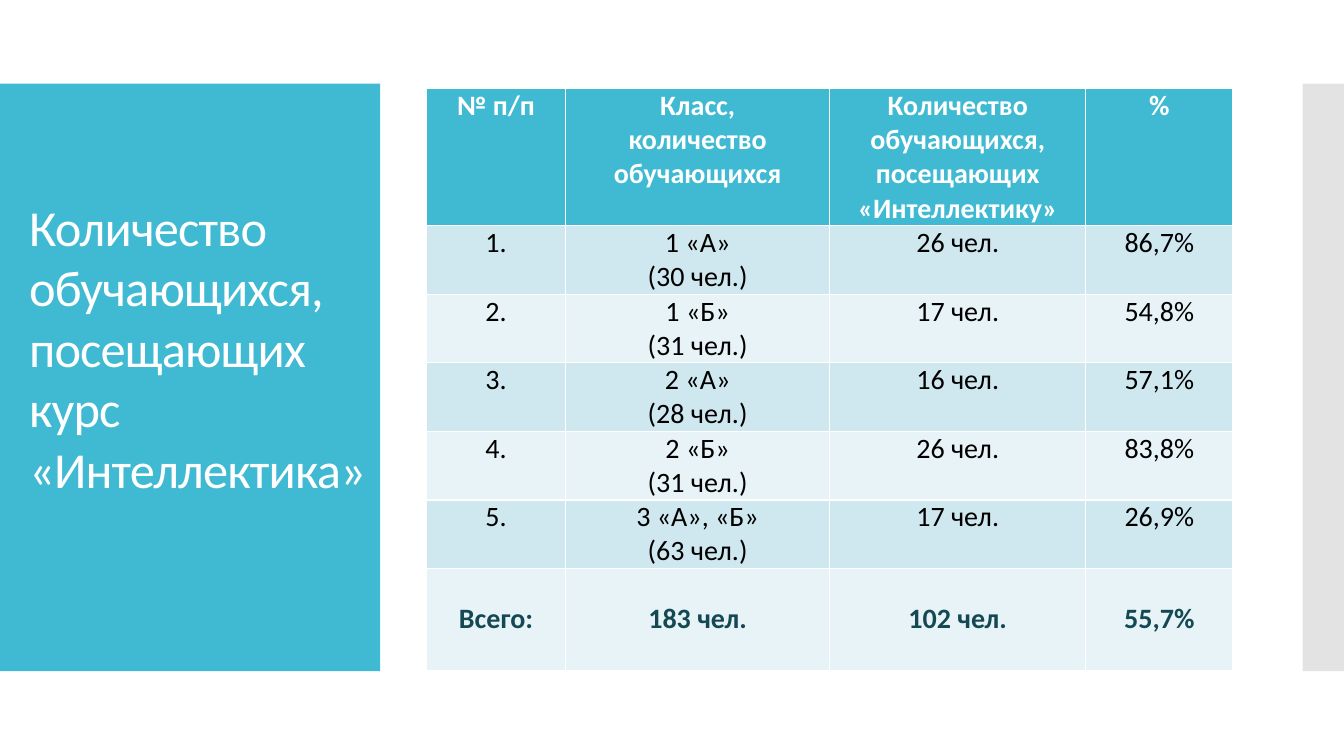
"""Build a slide with a side title and a table of course attendance by class."""
from lxml import etree
from pptx import Presentation
from pptx.dml.color import RGBColor
from pptx.enum import shapes, text
from pptx.oxml import ns
from pptx.util import Inches, Pt

FONT = "Calibri"
COLORS = {
    "teal": "40BAD2", "gray": "C8C8C8", "white": "FFFFFF", "black": "000000",
    "dark": "CFE7EE", "light": "E8F3F7", "total": "144954",
}
WIDTHS = [1.38, 2.62, 2.54, 1.46]
HEIGHTS = [1.36] + [0.68] * 5 + [1.01]
ROWS = [
    ["№ п/п", "Класс,\nколичество обучающихся",
     "Количество\nобучающихся, посещающих «Интеллектику»", "%"],
    ["1.", "1 «А»\n(30 чел.)", "26 чел.", "86,7%"],
    ["2.", "1 «Б»\n(31 чел.)", "17 чел.", "54,8%"],
    ["3.", "2 «А»\n(28 чел.)", "16 чел.", "57,1%"],
    ["4.", "2 «Б»\n(31 чел.)", "26 чел.", "83,8%"],
    ["5.", "3 «А», «Б»\n(63 чел.)", "17 чел.", "26,9%"],
    ["Всего:", "183 чел.", "102 чел.", "55,7%"],
]


def color(name):
    return RGBColor.from_string(COLORS[name])


def style(font, size, name, bold=False):
    font.name, font.size, font.bold = FONT, Pt(size), bold
    font.color.rgb = color(name)


def add_panel(slide, left, width, name, alpha=None):
    panel = slide.shapes.add_shape(
        shapes.MSO_SHAPE.RECTANGLE,
        Inches(left), Inches(0.83), Inches(width), Inches(5.83))
    panel.shadow.inherit = False
    panel.fill.solid()
    panel.fill.fore_color.rgb = color(name)
    panel.line.fill.background()
    if alpha:
        tint = panel._element.spPr.find(".//" + ns.qn("a:srgbClr"))
        etree.SubElement(tint, ns.qn("a:alpha")).set("val", str(alpha * 1000))


def add_title(slide, words):
    box = slide.shapes.add_textbox(
        Inches(0.19), Inches(1.23), Inches(3.59), Inches(5.03))
    frame = box.text_frame
    frame.word_wrap = True
    frame.vertical_anchor = text.MSO_ANCHOR.MIDDLE
    frame.margin_bottom = Inches(0.65)
    line = frame.paragraphs[0]
    line.text = words
    style(line.font, 36, "white")
    for run in line.runs:
        style(run.font, 36, "white")
        run.font._element.set("spc", "-60")


def fill_cell(cell, words, fill, ink, bold):
    cell.fill.solid()
    cell.fill.fore_color.rgb = color(fill)
    cell.margin_left = cell.margin_right = Inches(0.07)
    cell.margin_top = cell.margin_bottom = 0
    cell.text = words
    for line in cell.text_frame.paragraphs:
        line.alignment = text.PP_ALIGN.CENTER
        style(line.font, 20, ink, bold)


def add_grid(slide):
    last = len(ROWS) - 1
    grid = slide.shapes.add_table(
        len(ROWS), len(WIDTHS), Inches(4.23), Inches(0.88),
        Inches(sum(WIDTHS)), Inches(sum(HEIGHTS))).table
    for col, width in zip(grid.columns, WIDTHS):
        col.width = Inches(width)
    for r, row in enumerate(ROWS):
        grid.rows[r].height = Inches(HEIGHTS[r])
        fill = "teal" if r == 0 else "dark" if r % 2 else "light"
        ink = {0: "white", last: "total"}.get(r, "black")
        for c, words in enumerate(row):
            cell = grid.cell(r, c)
            fill_cell(cell, words, fill, ink, r in (0, last))
            if r == last:
                cell.vertical_anchor = text.MSO_ANCHOR.MIDDLE


def main():
    deck = Presentation()
    deck.slide_width, deck.slide_height = Inches(13.33), Inches(7.5)
    slide = deck.slides.add_slide(deck.slide_layouts[6])
    add_panel(slide, 0, 3.77, "teal")
    add_panel(slide, 12.92, 0.41, "gray", 50)
    add_title(slide, "Количество\vобучающихся, посещающих курс «Интеллектика»")
    add_grid(slide)
    deck.save("out.pptx")


if __name__ == "__main__":
    main()
